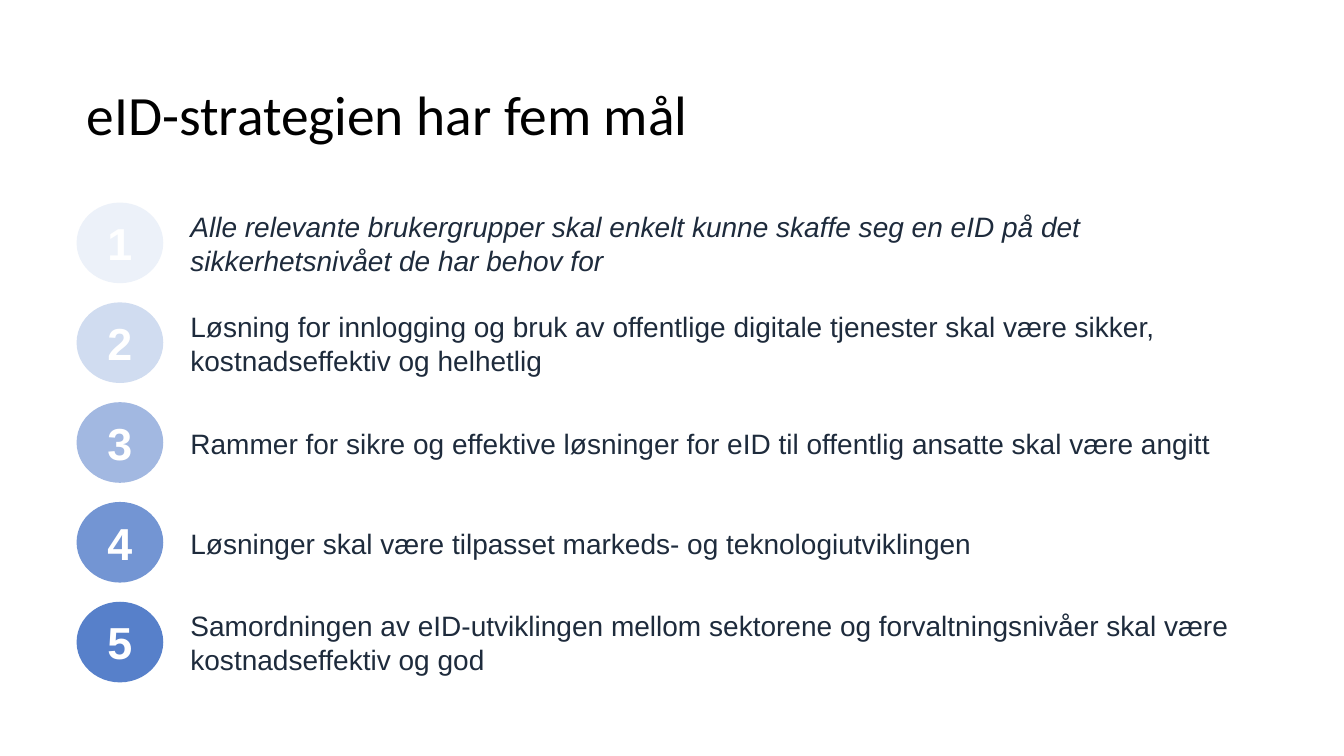
from pptx import Presentation
from pptx import util as u
from pptx.dml.color import RGBColor
from pptx.enum import shapes, text

GOALS = [
    ("ECF1F9", "Alle relevante brukergrupper skal enkelt kunne skaffe seg en eID på det sikkerhetsnivået de har behov for"),
    ("D0DCF0", "Løsning for innlogging og bruk av offentlige digitale tjenester skal være sikker, kostnadseffektiv og helhetlig"),
    ("A2B8E1", "Rammer for sikre og effektive løsninger for eID til offentlig ansatte skal være angitt"),
    ("7395D3", "Løsninger skal være tilpasset markeds- og teknologiutviklingen"),
    ("5780CA", "Samordningen av eID-utviklingen mellom sektorene og forvaltningsnivåer skal være kostnadseffektiv og god"),
]


def color(value):
    return RGBColor.from_string(value)


def write(sp, content, font="Arial", size=20, fill="1E2B3C", bold=False,
          italic=False, align=text.PP_ALIGN.LEFT, spacing=1.0, inset=None):
    tf = sp.text_frame
    tf.word_wrap = True
    tf.auto_size = text.MSO_AUTO_SIZE.NONE
    tf.vertical_anchor = text.MSO_ANCHOR.MIDDLE
    if inset is not None:
        tf.margin_left = tf.margin_right = u.Inches(inset)
        tf.margin_top = tf.margin_bottom = u.Inches(inset)
    p = tf.paragraphs[0]
    p.alignment = align
    p.line_spacing = spacing
    r = p.add_run()
    r.text = content
    r.font.name = font
    r.font.size = u.Pt(size)
    r.font.bold = bold
    r.font.italic = italic
    r.font.color.rgb = color(fill)


class GoalSlide:
    ink = "1E2B3C"
    white = "FFFFFF"

    def __init__(self, prs):
        self.s = prs.slides.add_slide(prs.slide_layouts[5])

    def title(self, content, x, y, w, h):
        sp = self.s.shapes.title
        sp.left, sp.top = u.Inches(x), u.Inches(y)
        sp.width, sp.height = u.Inches(w), u.Inches(h)
        write(sp, content, font="Calibri", size=39.6, fill="000000", spacing=0.9)

    def badge(self, group, number, fill, x, y, w, h):
        sp = group.shapes.add_shape(shapes.MSO_SHAPE.OVAL, u.Inches(x), u.Inches(y),
                                    u.Inches(w), u.Inches(h))
        sp.shadow.inherit = False
        sp.fill.solid()
        sp.fill.fore_color.rgb = color(fill)
        sp.line.fill.background()
        write(sp, str(number), size=32, fill=self.white, bold=True,
              align=text.PP_ALIGN.CENTER, inset=0.05)

    def label(self, group, content, x, y, w, h, italic):
        sp = group.shapes.add_textbox(u.Inches(x), u.Inches(y), u.Inches(w), u.Inches(h))
        write(sp, content, fill=self.ink, italic=italic)

    def goal(self, number, fill, content, y):
        group = self.s.shapes.add_group_shape()
        self.badge(group, number, fill, 0.76, y, 0.86, 0.8)
        self.label(group, content, 1.79, y + 0.02, 10.77, 0.77, italic=number == 1)


def main():
    prs = Presentation()
    prs.slide_width, prs.slide_height = u.Inches(13.33), u.Inches(7.5)
    slide = GoalSlide(prs)
    slide.title("eID-strategien har fem mål", 0.76, 0.88, 11.5, 0.57)
    for i, (fill, content) in enumerate(GOALS):
        slide.goal(i + 1, fill, content, 2.01 + 0.99 * i)
    prs.save("out.pptx")


if __name__ == "__main__":
    main()
